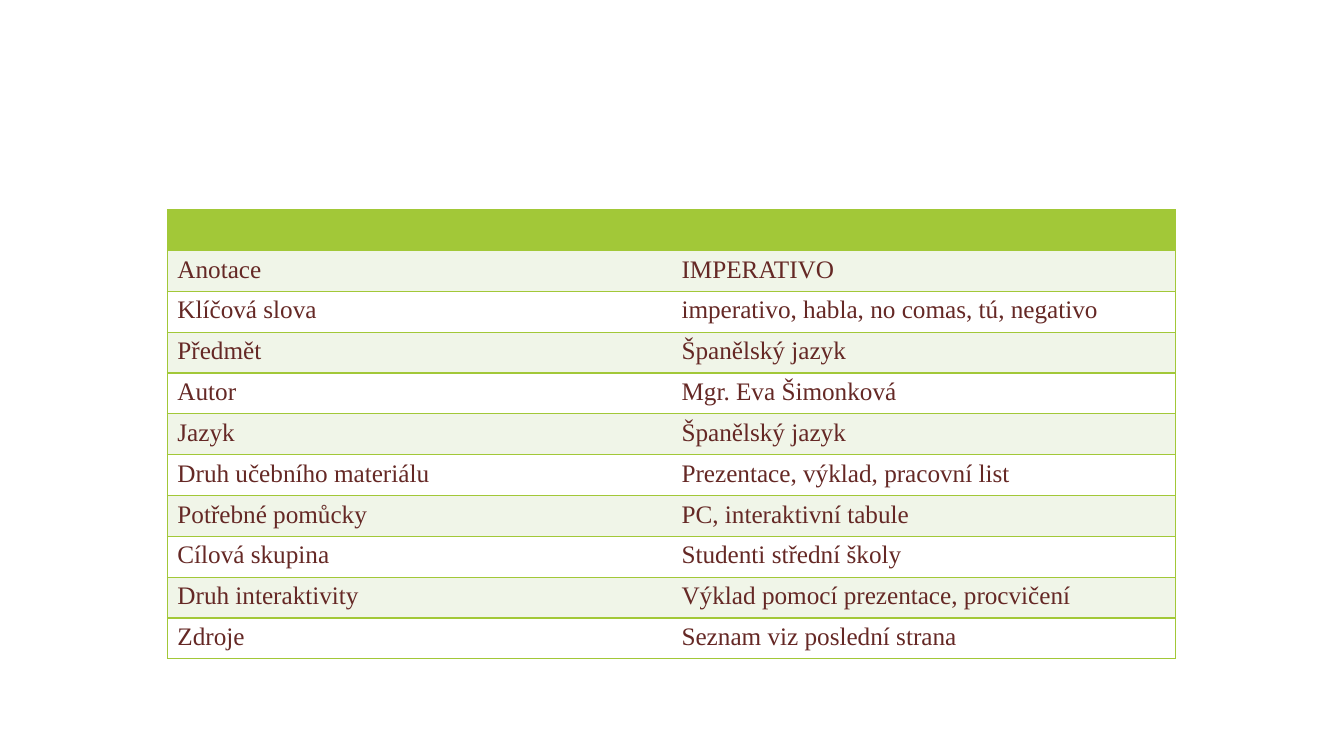
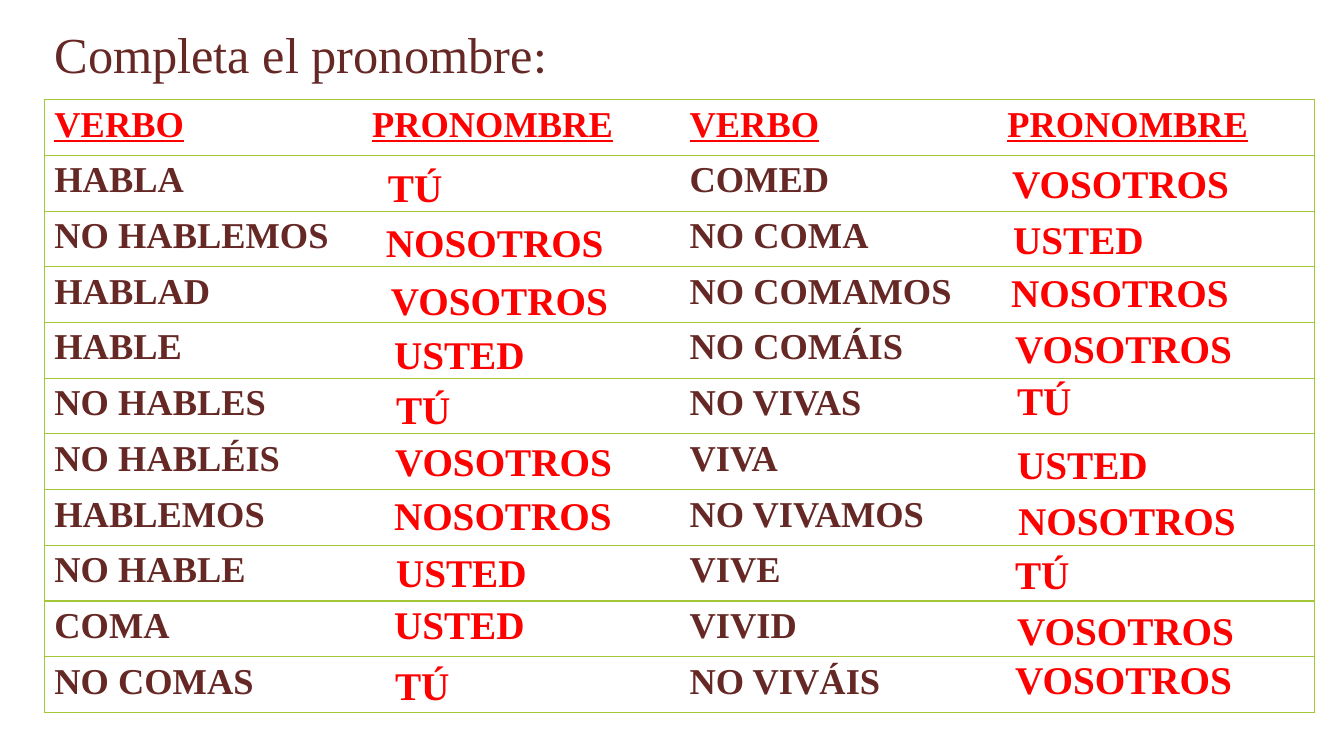
"""Build a lesson data sheet and a Spanish imperative pronoun exercise."""
from lxml import etree
from pptx import Presentation
from pptx.dml.color import RGBColor
from pptx.enum.text import MSO_ANCHOR as Anchor, MSO_AUTO_SIZE as AutoSize, PP_ALIGN as Align
from pptx.oxml.ns import qn
from pptx.util import Inches, Pt

BROWN, GREEN, PALE, WHITE, RED = "652825", "A2C838", "F0F5E8", "FFFFFF", "FF0000"
SERIF = "Times New Roman"


def style_text(paragraph, size, color, bold=False, underline=False):
    for run in paragraph.runs:
        run.font.name = SERIF
        run.font.size = Pt(size)
        run.font.bold = bold
        run.font.underline = underline
        run.font.color.rgb = RGBColor.from_string(color)


def add_ruled_table(slide, rows, left, top, width, height):
    table = slide.shapes.add_table(len(rows), len(rows[0]), Inches(left), Inches(top),
                                   Inches(width), Inches(height)).table
    table.first_row = table.horz_banding = False
    last = len(rows[0]) - 1
    for r, row in enumerate(rows):
        for c, text in enumerate(row):
            cell = table.cell(r, c)
            cell.text_frame.text = text
            properties = cell._tc.get_or_add_tcPr()
            ruled = {"a:lnL": c == 0, "a:lnR": c == last, "a:lnT": True, "a:lnB": True}
            for side, visible in ruled.items():
                line = etree.SubElement(properties, qn(side), w=str(Pt(1)))
                if visible:
                    paint = etree.SubElement(line, qn("a:solidFill"))
                    etree.SubElement(paint, qn("a:srgbClr"), val=GREEN)
                else:
                    etree.SubElement(line, qn("a:noFill"))
    return table


prs = Presentation()
prs.slide_width, prs.slide_height = Inches(13.33), Inches(7.5)

lesson_facts = [
    ("", ""),
    ("Anotace", "IMPERATIVO"),
    ("Klíčová slova", "imperativo, habla, no comas, tú, negativo"),
    ("Předmět", "Španělský jazyk"),
    ("Autor", "Mgr. Eva Šimonková"),
    ("Jazyk", "Španělský jazyk"),
    ("Druh učebního materiálu", "Prezentace, výklad, pracovní list"),
    ("Potřebné pomůcky", "PC, interaktivní tabule"),
    ("Cílová skupina", "Studenti střední školy"),
    ("Druh interaktivity", "Výklad pomocí prezentace, procvičení"),
    ("Zdroje", "Seznam viz poslední strana"),
]
data_sheet = prs.slides.add_slide(prs.slide_layouts[6])
facts_table = add_ruled_table(data_sheet, lesson_facts, 1.66, 2.08, 10, 4.46)
for r, row in enumerate(facts_table.rows):
    band = GREEN if r == 0 else PALE if r % 2 else WHITE
    for cell in row.cells:
        cell.fill.solid()
        cell.fill.fore_color.rgb = RGBColor.from_string(band)
        style_text(cell.text_frame.paragraphs[0], 18, BROWN)

exercise = prs.slides.add_slide(prs.slide_layouts[5])
title = exercise.shapes.title
title.left, title.top = Inches(0.44), Inches(0.21)
title.width, title.height = Inches(12.36), Inches(0.68)
title.text_frame.auto_size = AutoSize.NONE
title.text_frame.vertical_anchor = Anchor.BOTTOM
heading = title.text_frame.paragraphs[0]
heading.alignment = Align.LEFT
heading.line_spacing = 0.9
for part in ("Completa el pronombre", ":"):
    heading.add_run().text = part
style_text(heading, 36, BROWN)
heading.runs[1].font.name = "Calibri"

verb_pairs = [
    ("HABLA", "COMED"), ("NO HABLEMOS", "NO COMA"), ("HABLAD", "NO COMAMOS"),
    ("HABLE", "NO COMÁIS"), ("NO HABLES", "NO VIVAS"), ("NO HABLÉIS", "VIVA"),
    ("HABLEMOS", "NO VIVAMOS"), ("NO HABLE", "VIVE"), ("COMA", "VIVID"),
    ("NO COMAS", "NO VIVÁIS"),
]
verb_rows = [("VERBO", "PRONOMBRE") * 2] + [(one, "", two, "") for one, two in verb_pairs]
verb_table = add_ruled_table(exercise, verb_rows, 0.44, 0.99, 12.6, 6.08)
for r, row in enumerate(verb_table.rows):
    for cell in row.cells:
        cell.fill.background()
        style_text(cell.text_frame.paragraphs[0], 26, BROWN if r else RED, True, r == 0)

answers = [
    ("TÚ", 3.75, 1.62), ("NOSOTROS", 3.73, 2.17), ("VOSOTROS", 3.78, 2.74),
    ("USTED", 3.81, 3.28), ("TÚ", 3.83, 3.83), ("VOSOTROS", 3.82, 4.34),
    ("NOSOTROS", 3.81, 4.88), ("USTED", 3.83, 5.44), ("USTED", 3.81, 5.96),
    ("TÚ", 3.82, 6.56),
    ("VOSOTROS", 9.94, 1.58), ("USTED", 9.95, 2.14), ("NOSOTROS", 9.93, 2.67),
    ("VOSOTROS", 9.97, 3.22), ("TÚ", 9.99, 3.74), ("USTED", 9.99, 4.37),
    ("NOSOTROS", 10, 4.93), ("TÚ", 9.97, 5.46), ("VOSOTROS", 9.99, 6.02),
    ("VOSOTROS", 9.97, 6.5),
]
for pronoun, left, top in answers:
    width = 2.4 if len(pronoun) > 5 else 2.2
    answer = exercise.shapes.add_textbox(Inches(left), Inches(top), Inches(width), Inches(0.53))
    answer.text_frame.word_wrap = True
    answer.text_frame.auto_size = AutoSize.SHAPE_TO_FIT_TEXT
    answer.text_frame.text = pronoun
    paragraph = answer.text_frame.paragraphs[0]
    paragraph.line_spacing = 0.9
    style_text(paragraph, 28, RED, True)

prs.save("out.pptx")
